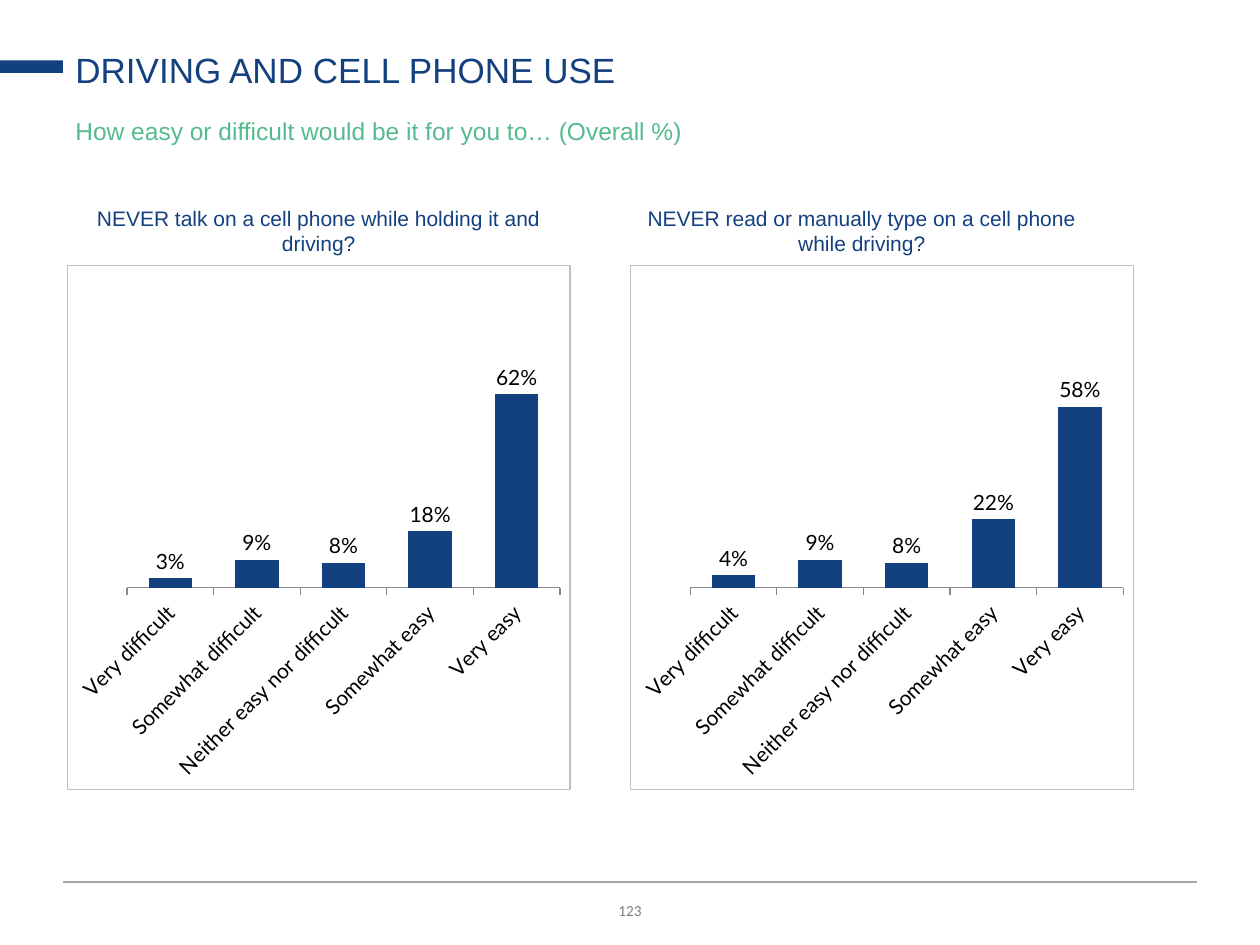
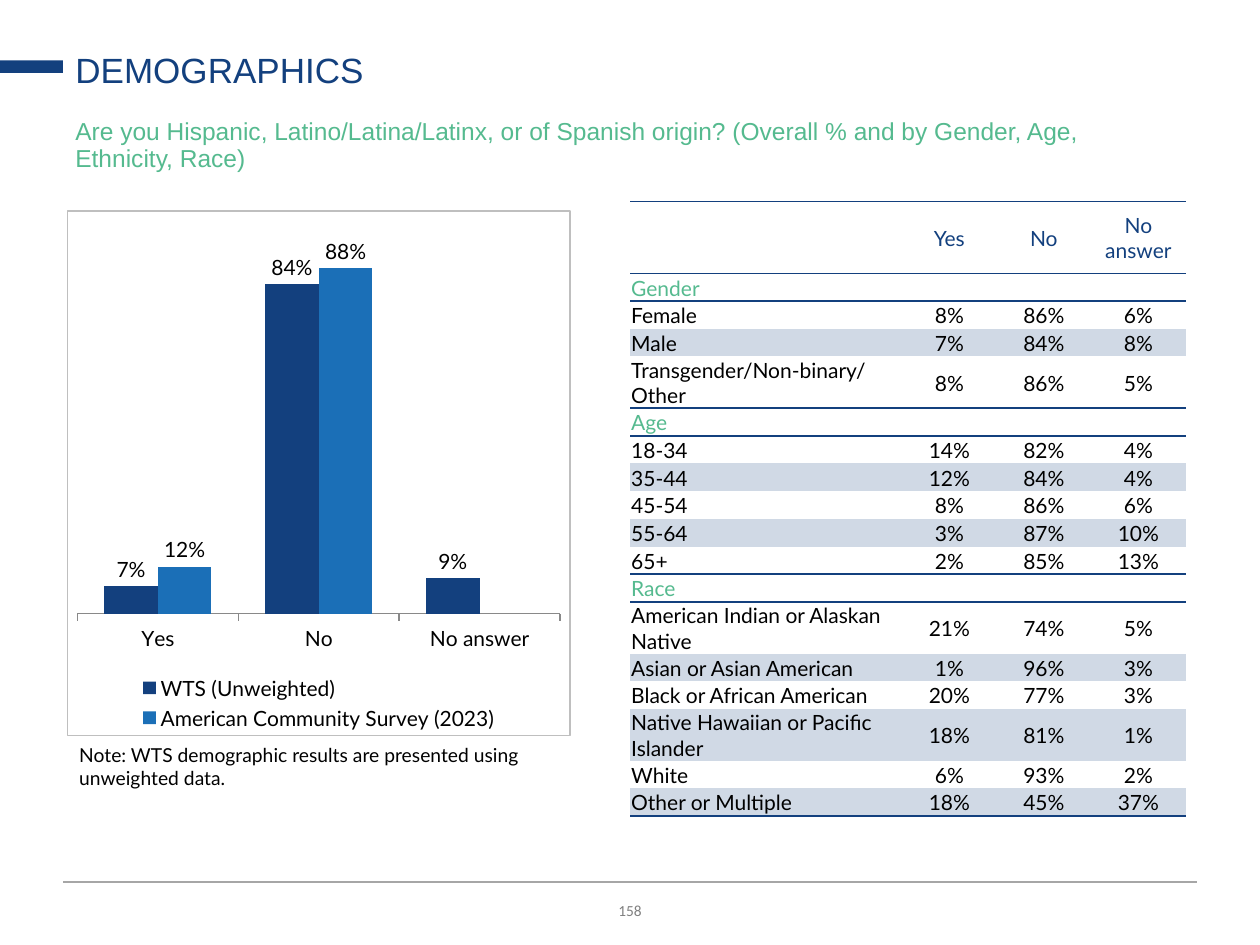
from dataclasses import dataclass

import lxml.etree
import pptx
import pptx.chart.data
import pptx.dml.color
import pptx.enum.chart
import pptx.enum.shapes
import pptx.enum.text
import pptx.oxml
import pptx.oxml.ns
import pptx.util
from pptx.util import Inches

COLORS = {
    "navy": "13407E",
    "blue": "1B6FB7",
    "green": "55BA8F",
    "band": "D0D9E5",
    "rule": "A6A6A6",
    "frame": "BFBFBF",
    "axis": "898989",
    "page": "808080",
    "black": "000000",
}
ALIGN = pptx.enum.text.PP_ALIGN
ANCHOR = pptx.enum.text.MSO_ANCHOR
NO_GRID_STYLE = "{2D5ABB26-0587-4C30-8999-92F81FD0307C}"
DRAWING = 'xmlns:a="http://schemas.openxmlformats.org/drawingml/2006/main"'
CHARTING = 'xmlns:c="http://schemas.openxmlformats.org/drawingml/2006/chart"'


@dataclass(frozen=True)
class Box:
    left: float
    top: float
    width: float
    height: float

    def lengths(self) -> tuple:
        return tuple(Inches(side) for side in (self.left, self.top, self.width, self.height))


@dataclass(frozen=True)
class TextStyle:
    size: float
    color: str
    font: str = "Arial"
    align: ALIGN = ALIGN.LEFT
    anchor: ANCHOR = ANCHOR.TOP
    line_spacing: float = 1.0


@dataclass(frozen=True)
class Series:
    name: str
    values: tuple
    color: str = "navy"
    label_format: str = "###0%"


@dataclass(frozen=True)
class ChartSpec:
    box: Box
    categories: tuple
    series: tuple
    slanted_labels: bool = False
    legend: bool = False


@dataclass(frozen=True)
class Question:
    text: str
    text_left: float
    chart_left: float
    values: tuple


@dataclass(frozen=True)
class Section:
    name: str
    rows: tuple


TITLE = TextStyle(20, "navy", anchor=ANCHOR.BOTTOM, line_spacing=0.9)
SUBTITLE = TextStyle(14, "green", line_spacing=0.9)
QUESTION = TextStyle(12, "navy", align=ALIGN.CENTER)
PAGE_NUMBER = TextStyle(11, "page", "Calibri", ALIGN.CENTER, ANCHOR.MIDDLE)
NOTE = TextStyle(11, "black", "Lato")

EASE_SCALE = ("Very difficult", "Somewhat difficult", "Neither easy nor difficult",
              "Somewhat easy", "Very easy")
ANSWERS = ("Yes", "No", "No answer")
QUESTIONS = (
    Question("NEVER talk on a cell phone while holding it and driving?",
             0.53, 0.53, (0.03, 0.09, 0.08, 0.18, 0.62)),
    Question("NEVER read or manually type on a cell phone while driving?",
             4.84, 5, (0.04, 0.09, 0.08, 0.22, 0.58)),
)
ORIGIN_SERIES = (
    Series("WTS (Unweighted)", (0.07, 0.84, 0.09)),
    Series("American Community Survey (2023)", (0.12, 0.88, None), "blue", "0%"),
)
SECTIONS = (
    Section("Gender", (
        ("Female", 8, 86, 6),
        ("Male", 7, 84, 8),
        ("Transgender/Non-binary/Other", 8, 86, 5),
    )),
    Section("Age", (
        ("18-34", 14, 82, 4),
        ("35-44", 12, 84, 4),
        ("45-54", 8, 86, 6),
        ("55-64", 3, 87, 10),
        ("65+", 2, 85, 13),
    )),
    Section("Race", (
        ("American Indian or Alaskan Native", 21, 74, 5),
        ("Asian or Asian American", 1, 96, 3),
        ("Black or African American", 20, 77, 3),
        ("Native Hawaiian or Pacific Islander", 18, 81, 1),
        ("White", 6, 93, 2),
        ("Other or Multiple", 18, 45, 37),
    )),
)


def rgb(name: str) -> pptx.dml.color.RGBColor:
    return pptx.dml.color.RGBColor.from_string(COLORS[name])


def style_font(font, style: TextStyle) -> None:
    font.size = pptx.util.Pt(style.size)
    font.name = style.font
    font.color.rgb = rgb(style.color)


def add_text(slide, box: Box, text: str, style: TextStyle):
    shape = slide.shapes.add_textbox(*box.lengths())
    frame = shape.text_frame
    frame.word_wrap = True
    frame.vertical_anchor = style.anchor
    frame.text = text
    paragraph = frame.paragraphs[0]
    paragraph.alignment = style.align
    paragraph.line_spacing = style.line_spacing
    style_font(paragraph.runs[0].font, style)
    return shape


def add_base_slide(presentation, title: str, subtitle: str, subtitle_width: float, page: int):
    slide = presentation.slides.add_slide(presentation.slide_layouts[6])
    number = add_text(slide, Box(0.5, 7.06, 9, 0.3), str(page), PAGE_NUMBER)
    number.text_frame.paragraphs[0].runs[0].font._element.set("cap", "small")

    rule = slide.shapes.add_connector(pptx.enum.shapes.MSO_CONNECTOR.STRAIGHT,
                                      Inches(0.5), Inches(7), Inches(9.5), Inches(7))
    rule.line.color.rgb = rgb("rule")
    rule.line.width = pptx.util.Pt(0.75)
    lxml.etree.SubElement(rule._element.spPr, pptx.oxml.ns.qn("a:effectLst"))

    tab = slide.shapes.add_shape(pptx.enum.shapes.MSO_SHAPE.RECTANGLE,
                                 *Box(0, 0.48, 0.5, 0.1).lengths())
    tab.shadow.inherit = False
    tab.fill.solid()
    tab.fill.fore_color.rgb = rgb("navy")
    tab.line.fill.background()

    add_text(slide, Box(0.5, 0.9, subtitle_width, 0.67), subtitle, SUBTITLE)
    add_text(slide, Box(0.5, 0.29, 6.7, 0.48), title, TITLE)
    return slide


def add_column_chart(slide, spec: ChartSpec) -> None:
    data = pptx.chart.data.CategoryChartData(number_format="0%")
    data.categories = spec.categories
    for series in spec.series:
        data.add_series(series.name, series.values)
    chart = slide.shapes.add_chart(pptx.enum.chart.XL_CHART_TYPE.COLUMN_CLUSTERED,
                                   *spec.box.lengths(), data).chart
    style_font(chart.font, TextStyle(12, "black", "Lato"))
    chart.has_title = False
    chart.has_legend = spec.legend
    if spec.legend:
        chart.legend.position = pptx.enum.chart.XL_LEGEND_POSITION.BOTTOM
        chart.legend.include_in_layout = False

    chart.value_axis.minimum_scale = 0
    chart.value_axis.maximum_scale = 1
    chart.value_axis.has_major_gridlines = False
    chart.value_axis.visible = False
    axis = chart.category_axis
    axis.major_tick_mark = pptx.enum.chart.XL_TICK_MARK.OUTSIDE
    axis.format.line.color.rgb = rgb("axis")
    axis.format.line.width = pptx.util.Pt(0.75)
    if spec.slanted_labels:
        style_font(axis.tick_labels.font, TextStyle(12, "black", "Lato"))
        body = axis._element.find(".//" + pptx.oxml.ns.qn("a:bodyPr"))
        body.set("rot", "-2700000")
        body.set("vert", "horz")

    plot = chart.plots[0]
    plot.gap_width = 100
    plot.overlap = 0
    plot.vary_by_categories = False
    for drawn, series in zip(plot.series, spec.series):
        drawn.format.fill.solid()
        drawn.format.fill.fore_color.rgb = rgb(series.color)
        labels = drawn.data_labels
        labels.show_value = True
        labels.number_format = series.label_format
        labels.number_format_is_linked = False
        labels.position = pptx.enum.chart.XL_LABEL_POSITION.OUTSIDE_END

    frame = pptx.oxml.parse_xml(
        f'<c:spPr {CHARTING} {DRAWING}><a:noFill/><a:ln w="9525"><a:solidFill>'
        f'<a:srgbClr val="{COLORS["frame"]}"/></a:solidFill></a:ln></c:spPr>')
    chart._chartSpace.find(pptx.oxml.ns.qn("c:chart")).addnext(frame)


def fill_cell(cell, text: str, color: str, align: ALIGN, banded: bool, borders: str) -> None:
    properties = cell._tc.get_or_add_tcPr()
    for side in borders:
        properties.append(pptx.oxml.parse_xml(
            f'<a:ln{side} {DRAWING} w="12700"><a:solidFill>'
            f'<a:srgbClr val="{COLORS["navy"]}"/></a:solidFill></a:ln{side}>'))
    if banded:
        cell.fill.solid()
        cell.fill.fore_color.rgb = rgb("band")
    else:
        cell.fill.background()
    cell.margin_left = cell.margin_top = cell.margin_right = Inches(0.01)
    cell.margin_bottom = 0
    cell.vertical_anchor = ANCHOR.MIDDLE
    paragraph = cell.text_frame.paragraphs[0]
    paragraph.alignment = align
    if text:
        paragraph.text = text
        style_font(paragraph.runs[0].font, TextStyle(12, color, "Lato"))
    else:
        lxml.etree.SubElement(paragraph._p, pptx.oxml.ns.qn("a:endParaRPr"), sz="1200")


def add_answer_table(slide, box: Box, sections: tuple) -> None:
    rows = [(("", *ANSWERS), "navy", False, "TB")]
    for section in sections:
        rows.append(((section.name, "", "", ""), "green", False, "T"))
        for index, (group, *shares) in enumerate(section.rows):
            texts = (group, *(f"{share}%" for share in shares))
            borders = "B" if index == len(section.rows) - 1 else ""
            rows.append((texts, "black", index % 2 == 1, borders))

    table = slide.shapes.add_table(len(rows), len(ANSWERS) + 1, *box.lengths()).table
    table.first_row = table.horz_banding = False
    table._tbl.tblPr.find(pptx.oxml.ns.qn("a:tableStyleId")).text = NO_GRID_STYLE
    for column, width in zip(table.columns, (2.16, 0.75, 0.75, 0.75)):
        column.width = Inches(width)
    for row_index, (texts, color, banded, borders) in enumerate(rows):
        table.rows[row_index].height = Inches(0.22 if row_index else 0.57)
        for column_index, text in enumerate(texts):
            align = ALIGN.CENTER if column_index else ALIGN.LEFT
            fill_cell(table.cell(row_index, column_index), text, color, align, banded, borders)


def add_driving_slide(presentation) -> None:
    slide = add_base_slide(presentation, "DRIVING AND CELL PHONE USE",
                           "How easy or difficult would be it for you to… (Overall %)", 6.7, 123)
    for question in QUESTIONS:
        add_text(slide, Box(question.text_left, 1.58, 4, 0.5), question.text, QUESTION)
        add_column_chart(slide, ChartSpec(Box(question.chart_left, 2.1, 4, 4.17), EASE_SCALE,
                                          (Series("Series 1", question.values),),
                                          slanted_labels=True))


def add_demographics_slide(presentation) -> None:
    slide = add_base_slide(presentation, "DEMOGRAPHICS",
                           "Are you Hispanic, Latino/Latina/Latinx, or of Spanish origin? "
                           "(Overall % and by Gender, Age, Ethnicity, Race)", 8.9, 158)
    add_column_chart(slide, ChartSpec(Box(0.53, 1.67, 4, 4.17), ANSWERS, ORIGIN_SERIES,
                                      legend=True))
    add_answer_table(slide, Box(5, 1.6, 4.41, 4.31), SECTIONS)
    add_text(slide, Box(0.53, 5.85, 4.21, 0.29),
             "Note: WTS demographic results are presented using unweighted data.", NOTE)


def main() -> None:
    presentation = pptx.Presentation()
    presentation.slide_width = Inches(10)
    presentation.slide_height = Inches(7.5)
    add_driving_slide(presentation)
    add_demographics_slide(presentation)
    presentation.save("out.pptx")


if __name__ == "__main__":
    main()
